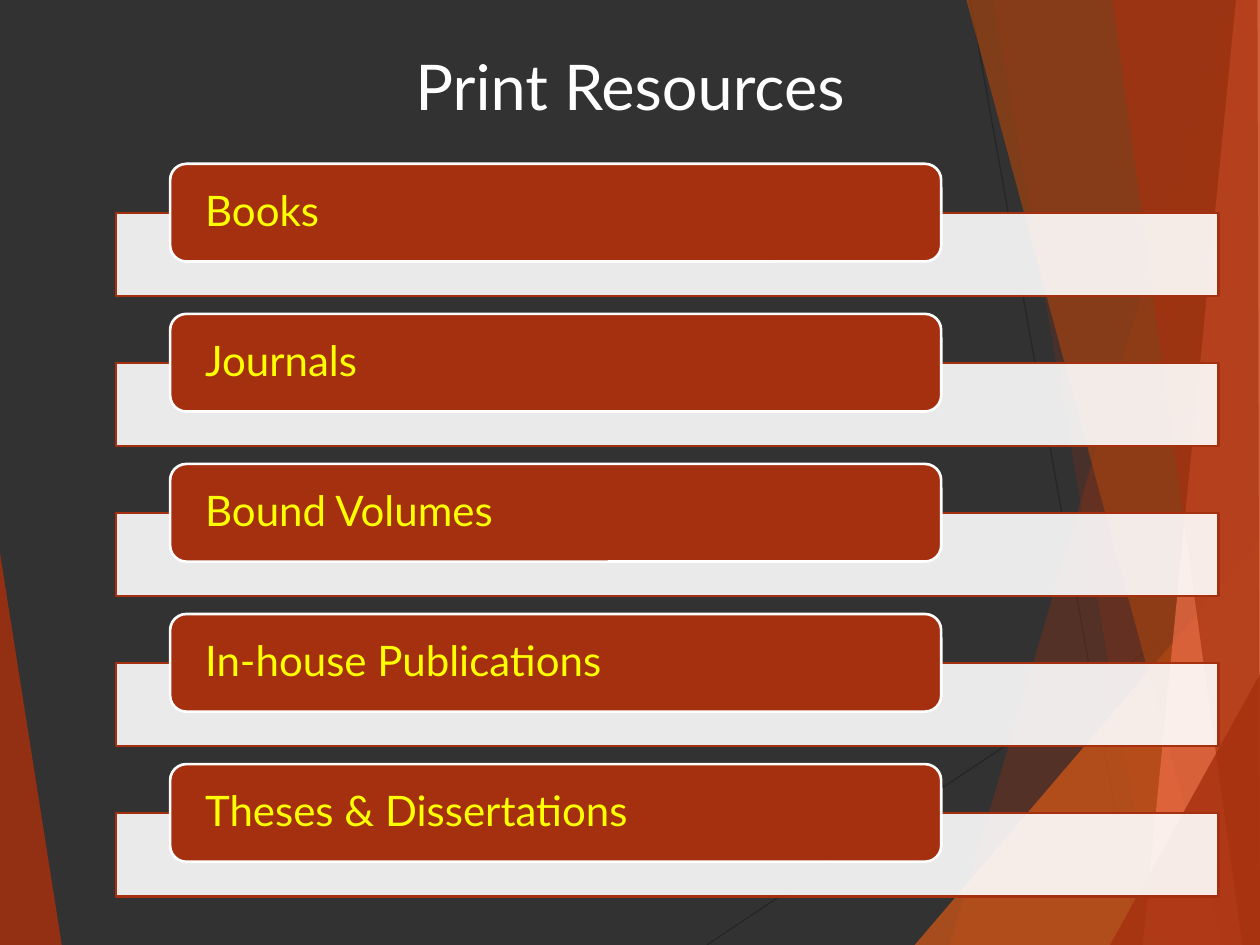
import dataclasses
import typing

import pptx
import pptx.dml.color
import pptx.dml.fill
import pptx.enum.shapes
import pptx.enum.text
import pptx.oxml.ns
import pptx.oxml.xmlchemy
import pptx.util

# The slide is a grid of square cells, 100 columns by 75 rows
COLS, ROWS = 100, 75
CELL = pptx.util.Inches(0.1)
FONT = "Lato"
RUST, WHITE, YELLOW = "A5300F", "FFFFFF", "FFFF00"

Point = tuple[float, float]
SHAPE = pptx.enum.shapes.MSO_SHAPE
ANCHOR = pptx.enum.text.MSO_ANCHOR
ALIGN = pptx.enum.text.PP_ALIGN


@dataclasses.dataclass
class Facet:
    """A translucent polygon of the backdrop, in grid cells."""
    points: list[Point]
    color: str
    opacity: int


@dataclasses.dataclass
class Box:
    """A rectangle in grid cells."""
    col: float
    row: float
    cols: float
    rows: float

    def emu(self) -> list[int]:
        return [cells(n) for n in (self.col, self.row, self.cols, self.rows)]


HAIRLINES: list[tuple[Point, Point]] = [
    ((56.1, ROWS), (COLS, 45.7)),
    ((77, 0), (90.4, ROWS)),
]
FACETS = [
    Facet([(0, 43.9), (4.9, ROWS), (0, ROWS)], RUST, 85),
    Facet([(97.5, 0), (75.4, ROWS), (COLS, ROWS), (COLS, 0)], RUST, 30),
    Facet([(78.8, 0), (91.9, ROWS), (COLS, ROWS), (COLS, 0)], RUST, 20),
    Facet([(72.6, ROWS), (COLS, 42.9), (COLS, ROWS)], "D55816", 72),
    Facet([(76.7, 0), (97, ROWS), (COLS, ROWS), (COLS, 0)], "A04210", 70),
    Facet([(98.1, 0), (90.7, ROWS), (COLS, ROWS), (COLS, 0)], "EE6E4A", 70),
    Facet([(88.3, 0), (98.6, ROWS), (COLS, ROWS), (99.8, 0)], RUST, 65),
    Facet([(88.1, ROWS), (COLS, 53.5), (COLS, ROWS)], RUST, 80),
]
RESOURCES = ["Books", "Journals", "Bound Volumes", "In-house Publications",
             "Theses & Dissertations"]
FIRST_ROW, PITCH = 13, 11.91


def cells(n: float) -> int:
    return round(n * CELL)


def rgb(color: str) -> pptx.dml.color.RGBColor:
    return pptx.dml.color.RGBColor.from_string(color)


def paint(fill: pptx.dml.fill.FillFormat, color: str, opacity: int = 100) -> None:
    fill.solid()
    fill.fore_color.rgb = rgb(color)
    if opacity < 100:
        clr = fill._xPr.find(".//" + pptx.oxml.ns.qn("a:srgbClr"))
        alpha = pptx.oxml.xmlchemy.OxmlElement("a:alpha")
        alpha.set("val", str(opacity * 1000))
        clr.append(alpha)


def add_hairline(shapes: typing.Any, start: Point, end: Point) -> None:
    line = shapes.add_connector(pptx.enum.shapes.MSO_CONNECTOR.STRAIGHT,
                                *[cells(n) for n in start + end])
    line.line.color.rgb = rgb("262626")
    line.line.width = pptx.util.Pt(0.75)
    line._element.spPr.append(pptx.oxml.xmlchemy.OxmlElement("a:effectLst"))


def add_facet(shapes: typing.Any, facet: Facet) -> None:
    first, *rest = [(cells(x), cells(y)) for x, y in facet.points]
    builder = shapes.build_freeform(*first)
    builder.add_line_segments(rest, close=True)
    sp = builder.convert_to_shape()
    sp.shadow.inherit = False
    sp.line.fill.background()
    paint(sp.fill, facet.color, facet.opacity)


def add_panel(shapes: typing.Any, kind: SHAPE, box: Box, fill: str, line: str,
              opacity: int = 100) -> typing.Any:
    sp = shapes.add_shape(kind, *box.emu())
    sp.shadow.inherit = False
    paint(sp.fill, fill, opacity)
    sp.line.color.rgb = rgb(line)
    sp.line.width = pptx.util.Pt(1.5)
    return sp


def write(sp: typing.Any, text: str, size: float, color: str, align: ALIGN,
          anchor: ANCHOR) -> typing.Any:
    tf = sp.text_frame
    tf.word_wrap = True
    tf.vertical_anchor = anchor
    p = tf.paragraphs[0]
    p.text = text
    p.alignment = align
    p.font.name = FONT
    p.font.size = pptx.util.Pt(size)
    p.font.color.rgb = rgb(color)
    return tf


def add_resource(shapes: typing.Any, row: float, name: str) -> None:
    add_panel(shapes, SHAPE.RECTANGLE, Box(9.2, row + 3.9, 87.5, 6.6),
              WHITE, RUST, 90)
    label = add_panel(shapes, SHAPE.ROUNDED_RECTANGLE,
                      Box(13.5, row, 61.2, 7.75), RUST, WHITE)
    tf = write(label, name, 24, YELLOW, ALIGN.LEFT, ANCHOR.MIDDLE)
    tf.margin_left = tf.margin_right = cells(2.4)
    tf.margin_top = tf.margin_bottom = 0
    tf.paragraphs[0].line_spacing = 0.9


def main() -> None:
    prs = pptx.Presentation()
    prs.slide_width, prs.slide_height = cells(COLS), cells(ROWS)
    s = prs.slides.add_slide(prs.slide_layouts[6])

    # Backdrop
    paint(s.background.fill, "323232")
    for start, end in HAIRLINES:
        add_hairline(s.shapes, start, end)
    for facet in FACETS:
        add_facet(s.shapes, facet)

    # Title
    title = s.shapes.add_textbox(*Box(7.1, 3.3, 85.8, 9.2).emu())
    write(title, "Print Resources", 36, WHITE, ALIGN.CENTER, ANCHOR.TOP)

    # List of resources
    for i, name in enumerate(RESOURCES):
        add_resource(s.shapes, FIRST_ROW + i * PITCH, name)

    prs.save("out.pptx")


if __name__ == "__main__":
    main()
